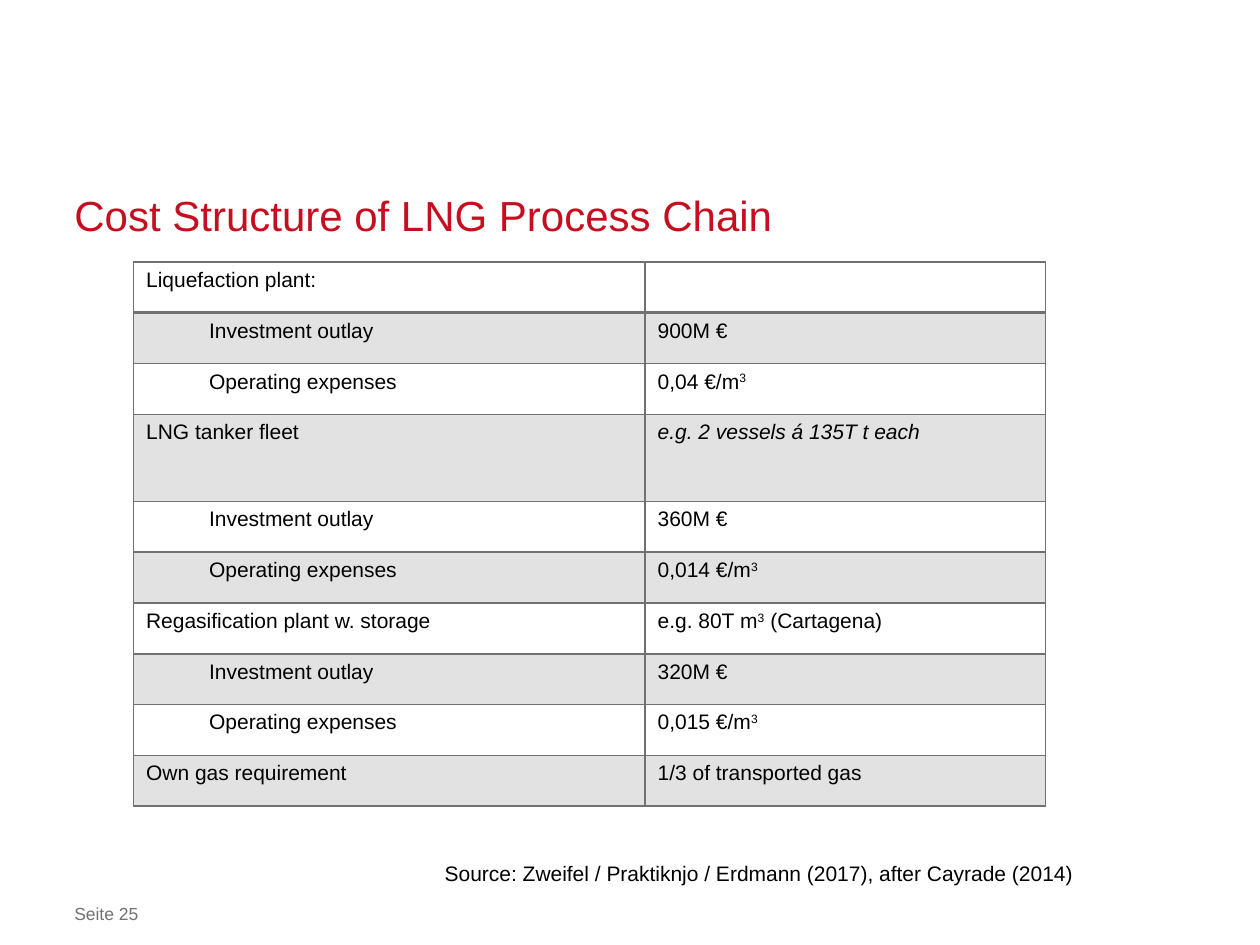
from lxml import etree
from pptx import Presentation
from pptx.dml.color import RGBColor
from pptx.enum.text import MSO_ANCHOR, PP_ALIGN
from pptx.oxml.ns import qn
from pptx.util import Inches, Pt

LEFT, RIGHT = PP_ALIGN.LEFT, PP_ALIGN.RIGHT
TOP, BOTTOM = MSO_ANCHOR.TOP, MSO_ANCHOR.BOTTOM
RED, GREY, BLACK = "C50E1F", "717171", "000000"


def color(value):
    return RGBColor.from_string(value)


def add_span(para, text, **changes):
    span = para.add_run()
    span.text = text
    values = {"name": "Arial", "size": Pt(12), "bold": False, "italic": False}
    values.update(changes)
    shade = values.pop("shade", BLACK)
    for name, value in values.items():
        setattr(span.font, name, value)
    span.font.color.rgb = color(shade)
    return span


deck = Presentation()
deck.slide_width, deck.slide_height = Inches(10), Inches(7.5)
page = deck.slides.add_slide(deck.slide_layouts[6])

# Title, source line and page number
texts = [
    ("Cost Structure of LNG Process Chain", (0.59, 1.51, 8.82, 0.39),
     24, RED, LEFT, BOTTOM, (0, 0), Pt(30)),
    ("Source: Zweifel / Praktiknjo / Erdmann (2017), after Cayrade (2014)",
     (3.27, 6.78, 5.35, 0.3), 12, BLACK, RIGHT, TOP, (0.1, 0.05), None),
    ("Seite 25", (0.59, 7.17, 7.24, 0.17), 10, GREY, LEFT, TOP, (0, 0), None),
]
for text, place, size, shade, align, anchor, (side, edge), spacing in texts:
    box = page.shapes.add_textbox(*map(Inches, place))
    frame_format = {
        "word_wrap": True, "vertical_anchor": anchor,
        "margin_left": Inches(side), "margin_right": Inches(side),
        "margin_top": Inches(edge), "margin_bottom": Inches(edge),
    }
    for name, value in frame_format.items():
        setattr(box.text_frame, name, value)
    para = box.text_frame.paragraphs[0]
    para.alignment = align
    para.line_spacing = spacing
    add_span(para, text, size=Pt(size), shade=shade)

# Cost table: label, indent level, value ("^" marks a one-digit superscript)
INVESTMENT, OPERATING = "Investment outlay", "Operating expenses"
costs = [
    ("Liquefaction plant:", 0, ""),
    (INVESTMENT, 1, "900M €"),
    (OPERATING, 1, "0,04 €/m^3"),
    ("LNG tanker fleet", 0, "e.g. 2 vessels á 135T t each"),
    (INVESTMENT, 1, "360M €"),
    (OPERATING, 1, "0,014 €/m^3"),
    ("Regasification plant w. storage", 0, "e.g. 80T m^3 (Cartagena)"),
    (INVESTMENT, 1, "320M €"),
    (OPERATING, 1, "0,015 €/m^3"),
    ("Own gas requirement", 0, "1/3 of transported gas"),
]
FLEET_ROW, FLEET_HEIGHT, TABLE_HEIGHT = 3, 0.69, 4.32
row_height = (TABLE_HEIGHT - FLEET_HEIGHT) / (len(costs) - 1)

table = page.shapes.add_table(
    len(costs), 2, Inches(1.06), Inches(2.08), Inches(7.24), Inches(TABLE_HEIGHT)
).table
table.first_row = table.horz_banding = False
for column, width in zip(table.columns, (4.06, 3.18)):
    column.width = Inches(width)

for row, (label, level, amount) in enumerate(costs):
    table.rows[row].height = Inches(FLEET_HEIGHT if row == FLEET_ROW else row_height)
    for col, text in enumerate((label, amount)):
        cell = table.cell(row, col)

        # Text
        para = cell.text_frame.paragraphs[0]
        para.alignment = LEFT
        if col == 0 and level:
            para.level = level
            props = para._p.get_or_add_pPr()
            props.set("marL", str(Inches(0.5)))
            props.set("indent", "0")
        italic = row == FLEET_ROW and col == 1
        base, _, rest = text.partition("^")
        if base:
            add_span(para, base, italic=italic)
        if rest:
            power = add_span(para, rest[0])
            power.font._element.set("baseline", "30000")
        if rest[1:]:
            add_span(para, rest[1:])

        # Fill on every second row
        if row % 2:
            cell.fill.solid()
            cell.fill.fore_color.rgb = color(GREY)
            tint = cell._tc.tcPr.find(".//" + qn("a:srgbClr"))
            etree.SubElement(tint, qn("a:alpha"), val="20000")
        else:
            cell.fill.background()

        # Borders, heavier under the first row
        for index, side in enumerate("LRTB"):
            heavy = (row, side) in ((0, "B"), (1, "T"))
            line = etree.Element(qn("a:ln" + side), w=str(Pt(2 if heavy else 1)))
            paint = etree.SubElement(line, qn("a:solidFill"))
            etree.SubElement(paint, qn("a:srgbClr"), val=GREY)
            cell._tc.tcPr.insert(index, line)

deck.save("out.pptx")
